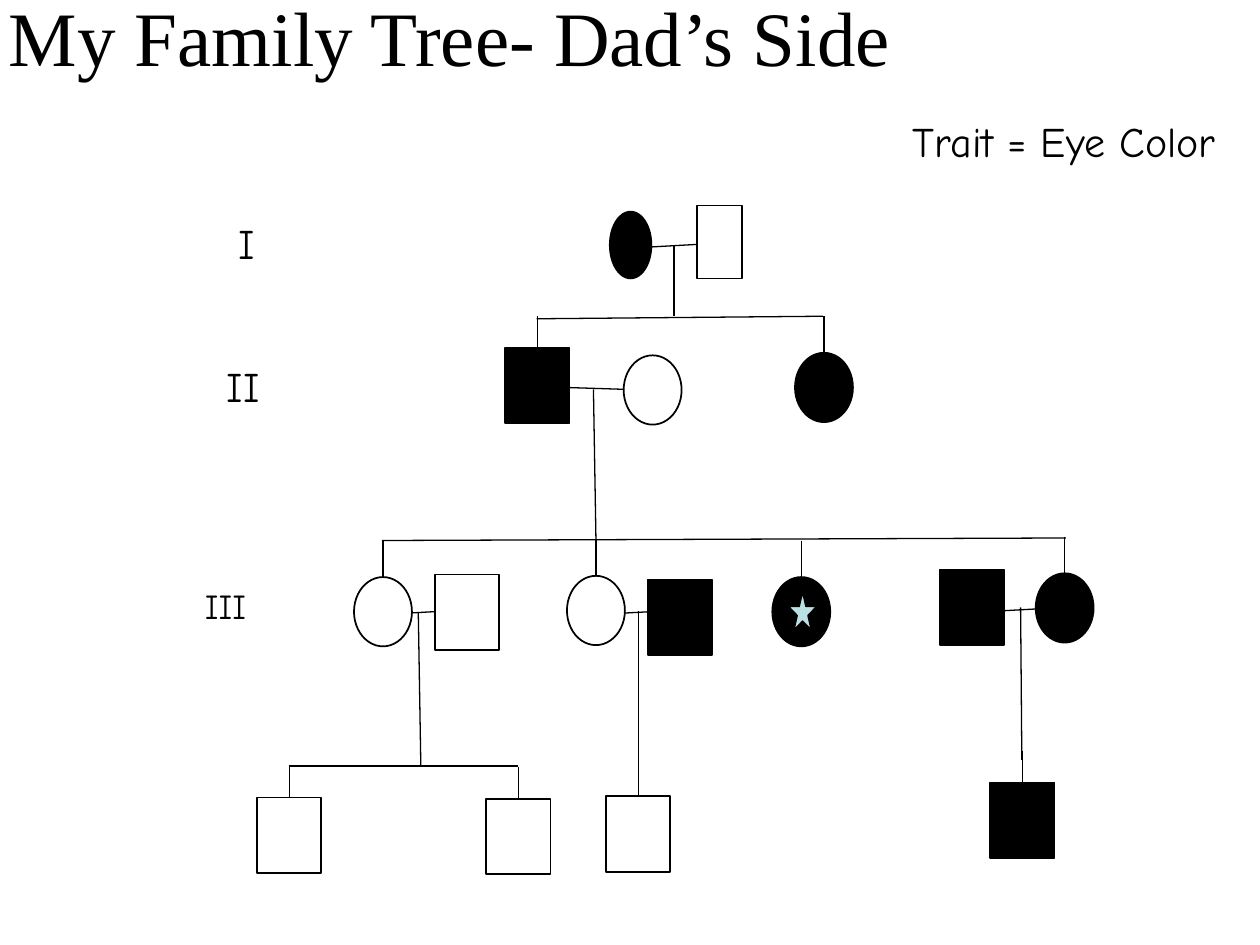
from pptx import Presentation
from pptx import util as u
from pptx.dml.color import RGBColor
from pptx.enum import shapes, text
from pptx.oxml import parse_xml
from pptx.oxml.ns import nsdecls

THEME = {
    "ink": RGBColor(0, 0, 0),
    "paper": RGBColor(255, 255, 255),
    "star": RGBColor(0xBB, 0xE0, 0xE3),
    "title_font": "Times New Roman",
    "label_font": "Comic Neue",
    "title_size": 44,
    "label_size": 24,
    "small_size": 20,
    "outline": 1,
    "thin": 0.75,
}

TITLE = ("My Family Tree- Dad’s Side", (-0.68, -0.34, 8.5, 1.25))
LABELS = [
    ("I", (1.63, 1.68, 0.66, 0.5), "label_size"),
    ("II", (1.6, 2.81, 0.66, 0.5), "label_size"),
    ("III", (1.46, 4.59, 0.66, 0.44), "small_size"),
    ("Trait = Eye Color", (6.77, 0.87, 3.35, 0.5), "label_size"),
]

FORMS = {
    "woman": (shapes.MSO_SHAPE.OVAL, 0.46, 0.55, 0.29),
    "man": (shapes.MSO_SHAPE.RECTANGLE, 0.51, 0.6, 0.25),
    "grandmother": (shapes.MSO_SHAPE.OVAL, 0.33, 0.53, 0),
    "grandfather": (shapes.MSO_SHAPE.RECTANGLE, 0.36, 0.58, 0),
}
# form, left, top, has trait, descends from a couple above
PEOPLE = [
    ("grandmother", 4.84, 1.68, True, False),
    ("grandfather", 5.53, 1.63, False, False),
    ("man", 4.01, 2.76, True, True),
    ("woman", 4.95, 2.82, False, False),
    ("woman", 6.31, 2.8, True, True),
    ("woman", 2.81, 4.58, False, True),
    ("man", 3.45, 4.56, False, False),
    ("woman", 4.5, 4.57, False, True),
    ("man", 5.14, 4.6, True, False),
    ("woman", 6.13, 4.58, True, True),
    ("man", 7.46, 4.52, True, False),
    ("woman", 8.22, 4.55, True, True),
    ("man", 2.04, 6.33, False, True),
    ("man", 3.86, 6.34, False, True),
    ("man", 4.81, 6.32, False, True),
    ("man", 7.86, 6.21, True, True),
]
MARRIAGES = [
    (5.17, 1.96, 5.53, 1.94),
    (4.01, 3.06, 4.95, 3.09),
    (3.17, 4.87, 3.53, 4.85),
    (4.88, 4.87, 5.25, 4.85),
    (7.91, 4.85, 8.28, 4.83),
]
STEMS = [
    (5.35, 1.95, 5.35, 2.51),
    (4.71, 3.09, 4.73, 4.29),
    (3.32, 4.86, 3.34, 6.07),
    (5.07, 4.85, 5.07, 6.18),
    (8.1, 4.82, 8.11, 6.03),
]
SIBLINGS = [
    (4.26, 2.53, 6.53, 2.51),
    (3.03, 4.29, 8.46, 4.27),
    (2.29, 6.08, 4.11, 6.08),
]
STAR = (6.26, 4.7, 0.22, 0.3)


def inches(values):
    return [u.Inches(value) for value in values]


def set_all(target, values):
    for name, value in values.items():
        setattr(target, name, value)


def write(box, words, font, size, anchor):
    set_all(box.text_frame, {"word_wrap": True, "vertical_anchor": anchor})
    para = box.text_frame.paragraphs[0]
    para.alignment = text.PP_ALIGN.CENTER
    span = para.add_run()
    span.text = words
    set_all(span.font, {"name": THEME[font], "size": u.Pt(THEME[size])})
    span.font.color.rgb = THEME["ink"]


def draw_line(page, ends):
    line = page.shapes.add_connector(shapes.MSO_CONNECTOR.STRAIGHT, *inches(ends))
    line.line.width = u.Pt(THEME["thin"])
    line.line.color.rgb = THEME["ink"]
    line._element.spPr.append(parse_xml(f"<a:effectLst {nsdecls('a')}/>"))


def draw_shape(page, form, place, fill, width):
    shape = page.shapes.add_shape(form, *inches(place))
    shape.shadow.inherit = False
    shape.fill.solid()
    shape.fill.fore_color.rgb = THEME[fill]
    shape.line.color.rgb = THEME["ink"]
    shape.line.width = u.Pt(THEME[width])


def main():
    deck = Presentation()
    set_all(deck, {"slide_width": u.Inches(10), "slide_height": u.Inches(7.5)})
    page = deck.slides.add_slide(deck.slide_layouts[5])

    words, place = TITLE
    title = page.shapes.title
    set_all(title, dict(zip(("left", "top", "width", "height"), inches(place))))
    write(title, words, "title_font", "title_size", text.MSO_ANCHOR.MIDDLE)
    for words, place, size in LABELS:
        box = page.shapes.add_textbox(*inches(place))
        write(box, words, "label_font", size, text.MSO_ANCHOR.TOP)

    for ends in MARRIAGES + STEMS + SIBLINGS:
        draw_line(page, ends)
    for person, left, top, has_trait, descends in PEOPLE:
        form, width, height, drop = FORMS[person]
        if descends:
            middle = left + width / 2
            draw_line(page, (middle, top - drop, middle, top))
        fill = "ink" if has_trait else "paper"
        draw_shape(page, form, (left, top, width, height), fill, "outline")
    draw_shape(page, shapes.MSO_SHAPE.STAR_5_POINT, STAR, "star", "thin")

    deck.save("out.pptx")


if __name__ == "__main__":
    main()
